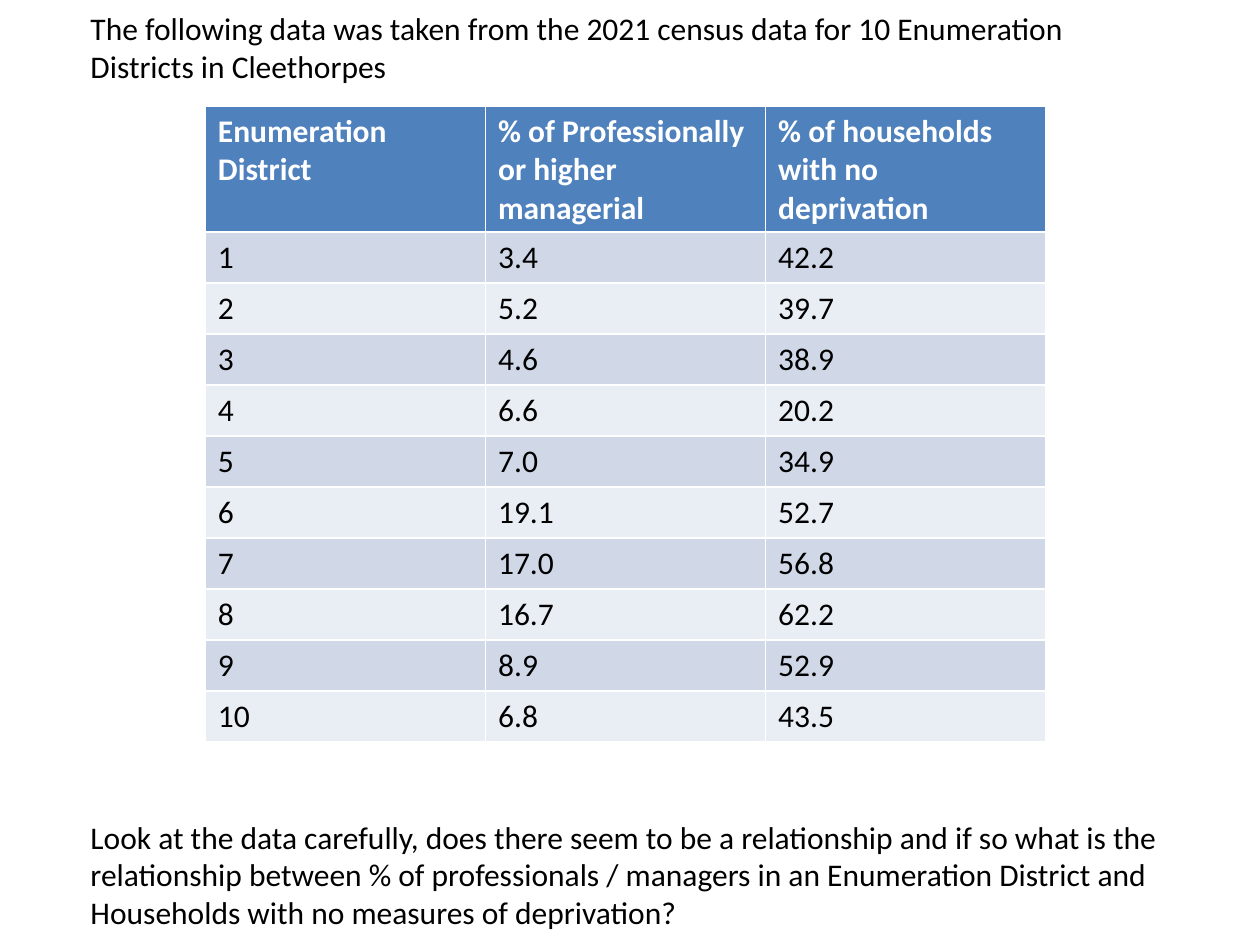
from pptx import Presentation
from pptx.dml.color import RGBColor
from pptx.enum.text import MSO_AUTO_SIZE
from pptx.util import Inches, Pt

COLORS = {
    "text": "000000",
    "header_text": "FFFFFF",
    "header": "4F81BD",
    "odd_row": "D0D8E8",
    "even_row": "E9EDF4",
}
BODY = {"name": "Calibri", "size": Pt(18), "bold": False}
HEADING = {**BODY, "bold": True}

INTRODUCTION = (
    "The following data was taken from the 2021 census data "
    "for 10 Enumeration Districts in Cleethorpes"
)
QUESTION = (
    "Look at the data carefully, does there seem to be a relationship and if so "
    "what is the relationship between % of professionals / managers in an "
    "Enumeration District and Households with no measures of deprivation?"
)
HEADERS = [
    "Enumeration District",
    "% of Professionally\nor higher managerial",
    "% of households with no deprivation",
]
PROFESSIONALS = ["3.4", "5.2", "4.6", "6.6", "7.0", "19.1", "17.0", "16.7", "8.9", "6.8"]
NOT_DEPRIVED = ["42.2", "39.7", "38.9", "20.2", "34.9", "52.7", "56.8", "62.2", "52.9", "43.5"]


def write_text(frame, text, style, color):
    """Fill a text frame, one paragraph for each line of text."""
    frame.text = text
    for para in frame.paragraphs:
        for span in para.runs:
            for attribute, value in style.items():
                setattr(span.font, attribute, value)
            span.font.color.rgb = RGBColor.from_string(COLORS[color])


def add_paragraph_box(page, text, top, height):
    box = page.shapes.add_textbox(Inches(0.62), Inches(top), Inches(8.67), Inches(height))
    frame = box.text_frame
    frame.word_wrap = True
    frame.auto_size = MSO_AUTO_SIZE.SHAPE_TO_FIT_TEXT
    write_text(frame, text, BODY, "text")


def add_district_table(page):
    """Add the table; its built-in style draws the white cell borders."""
    districts = [str(number) for number in range(1, len(PROFESSIONALS) + 1)]
    records = [HEADERS, *zip(districts, PROFESSIONALS, NOT_DEPRIVED)]
    height, header_height = Inches(5.05), Inches(1)
    table = page.shapes.add_table(
        len(records), len(HEADERS), Inches(1.63), Inches(0.84), Inches(6.67), height
    ).table
    for index, record in enumerate(records):
        if index == 0:
            row_height, fill, style, color = header_height, "header", HEADING, "header_text"
        else:
            row_height = (height - header_height) // len(districts)
            fill = "odd_row" if index % 2 else "even_row"
            style, color = BODY, "text"
        table.rows[index].height = row_height
        for cell, text in zip(table.rows[index].cells, record):
            cell.fill.solid()
            cell.fill.fore_color.rgb = RGBColor.from_string(COLORS[fill])
            write_text(cell.text_frame, text, style, color)


def main():
    deck = Presentation()
    deck.slide_width, deck.slide_height = Inches(10), Inches(7.5)
    page = deck.slides.add_slide(deck.slide_layouts[6])
    add_paragraph_box(page, INTRODUCTION, top=0.02, height=0.71)
    add_district_table(page)
    add_paragraph_box(page, QUESTION, top=6.44, height=1.01)
    deck.save("out.pptx")


if __name__ == "__main__":
    main()
